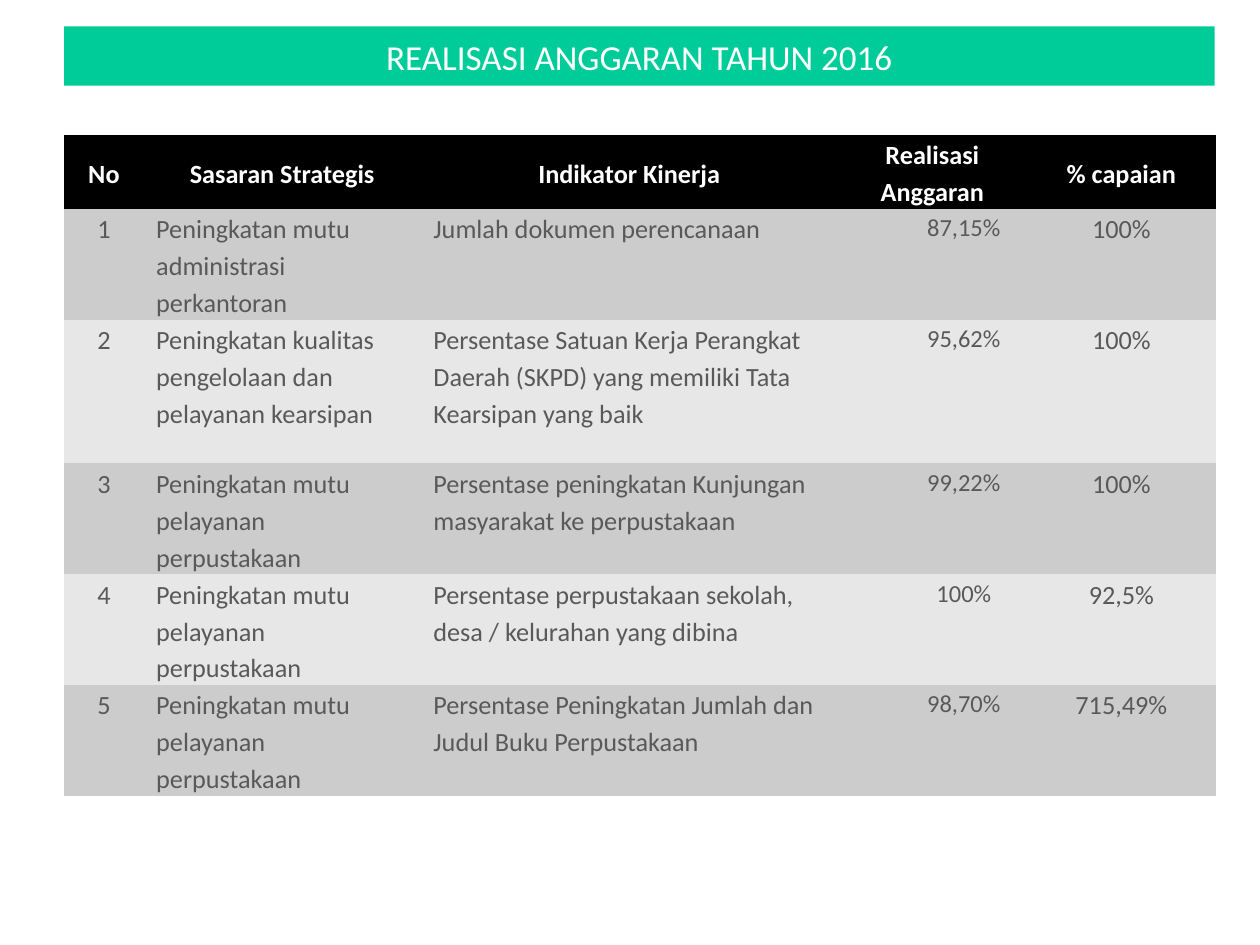
import pptx
import pptx.dml.color
import pptx.enum.shapes
import pptx.enum.text
import pptx.oxml.ns
import pptx.util

Inches = pptx.util.Inches
Pt = pptx.util.Pt
ALIGN = pptx.enum.text.PP_ALIGN
ANCHOR = pptx.enum.text.MSO_ANCHOR

LEFT, WIDTH = Inches(0.51), Inches(9.13)
NO_GRID_STYLE = "{2D5ABB26-0587-4C30-8999-92F81FD0307C}"
COLUMN_WIDTHS = [0.63, 2.2, 3.31, 1.5, 1.5]
ROW_HEIGHTS = [0.56, 0.88, 1.14, 0.88, 0.88, 0.88]
TEXT_COLUMNS = (1, 2)
BUDGET_COLUMN = 3
ROWS = [
    ["No", "Sasaran Strategis", "Indikator Kinerja", "Realisasi Anggaran", "% capaian"],
    ["1", "Peningkatan mutu administrasi perkantoran",
     "Jumlah dokumen perencanaan", "87,15%", "100%"],
    ["2", "Peningkatan kualitas pengelolaan dan pelayanan kearsipan",
     "Persentase Satuan Kerja Perangkat Daerah (SKPD) yang memiliki Tata Kearsipan yang baik",
     "95,62%", "100%"],
    ["3", "Peningkatan mutu pelayanan perpustakaan",
     "Persentase peningkatan Kunjungan masyarakat ke perpustakaan", "99,22%", "100%"],
    ["4", "Peningkatan mutu pelayanan perpustakaan",
     "Persentase perpustakaan sekolah, desa / kelurahan yang dibina", "100%", "92,5%"],
    ["5", "Peningkatan mutu pelayanan perpustakaan",
     "Persentase Peningkatan Jumlah dan Judul Buku Perpustakaan", "98,70%", "715,49%"],
]


def paint(fill, color):
    fill.solid()
    fill.fore_color.rgb = pptx.dml.color.RGBColor.from_string(color)


def write(tf, text, size, color, align, bold=False):
    tf.text = text
    p = tf.paragraphs[0]
    p.alignment = align
    font = p.runs[0].font
    font.name, font.size, font.bold = "Calibri", Pt(size), bold
    paint(font.fill, color)
    return p


prs = pptx.Presentation()
prs.slide_width, prs.slide_height = Inches(10), Inches(7.5)
s = prs.slides.add_slide(prs.slide_layouts[6])

# Title bar
sp = s.shapes.add_shape(pptx.enum.shapes.MSO_SHAPE.RECTANGLE,
                        LEFT, Inches(0.21), WIDTH, Inches(0.47))
sp.shadow.inherit = False
paint(sp.fill, "00CC99")
sp.line.fill.background()
sp.text_frame.vertical_anchor = ANCHOR.MIDDLE
write(sp.text_frame, "REALISASI ANGGARAN TAHUN 2016", 20, "FFFFFF", ALIGN.CENTER)

# Budget table
table = s.shapes.add_table(len(ROWS), len(COLUMN_WIDTHS), LEFT, Inches(1.07),
                           WIDTH, Inches(sum(ROW_HEIGHTS))).table
table._tbl.tblPr.find(pptx.oxml.ns.qn("a:tableStyleId")).text = NO_GRID_STYLE
for column, width in zip(table.columns, COLUMN_WIDTHS):
    column.width = Inches(width)
for row, height in zip(table.rows, ROW_HEIGHTS):
    row.height = Inches(height)

for i, texts in enumerate(ROWS):
    header = i == 0
    background = "000000" if header else ("E7E7E7", "CCCCCC")[i % 2]
    for j, text in enumerate(texts):
        budget = j == BUDGET_COLUMN and not header
        left_aligned = j in TEXT_COLUMNS and not header
        cell = table.cell(i, j)
        paint(cell.fill, background)
        cell.margin_left = cell.margin_right = Inches(0.07 if budget else 0.1)
        cell.margin_top = cell.margin_bottom = 0
        cell.vertical_anchor = ANCHOR.MIDDLE if header else ANCHOR.TOP
        p = write(cell.text_frame, text, 14 if budget else 15,
                  "FFFFFF" if header else "595959",
                  ALIGN.LEFT if left_aligned else ALIGN.CENTER, header)
        p.line_spacing = 1.15
        if budget:
            p._p.get_or_add_pPr().set("marL", str(Inches(0.5)))

prs.save("out.pptx")
